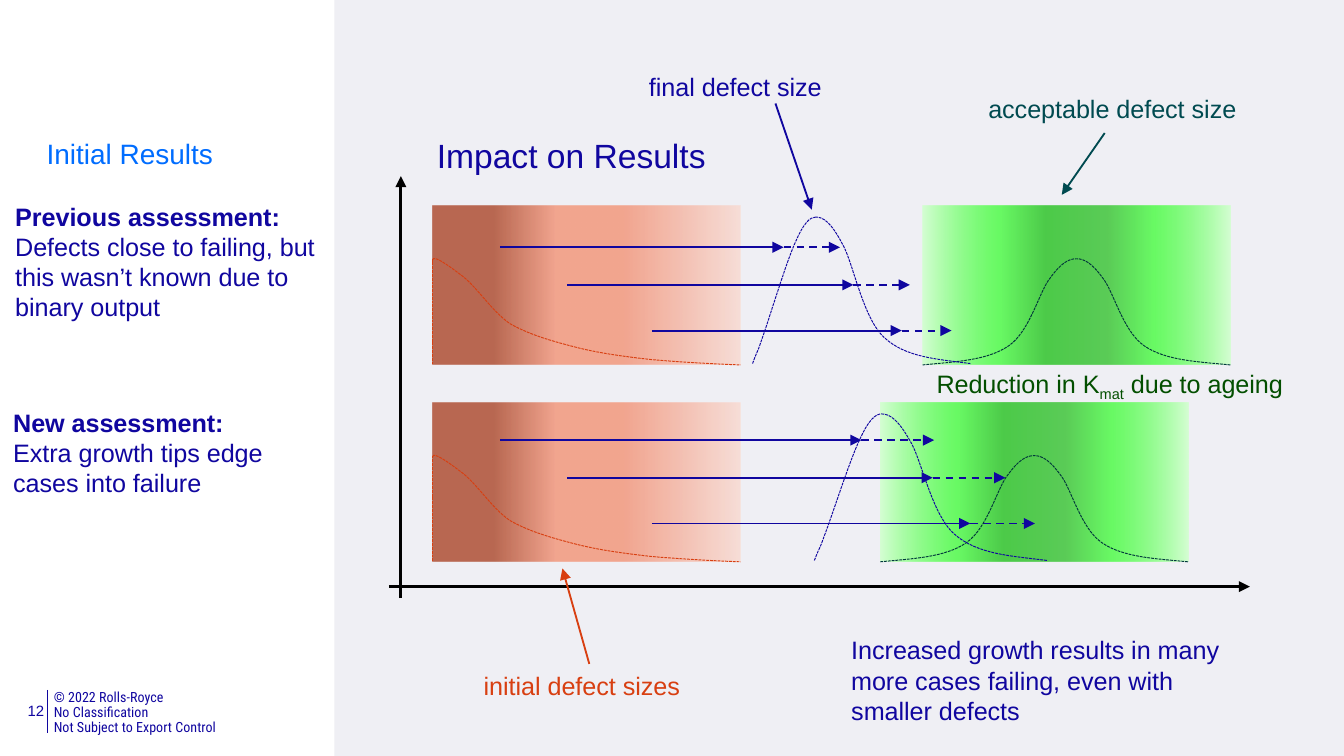
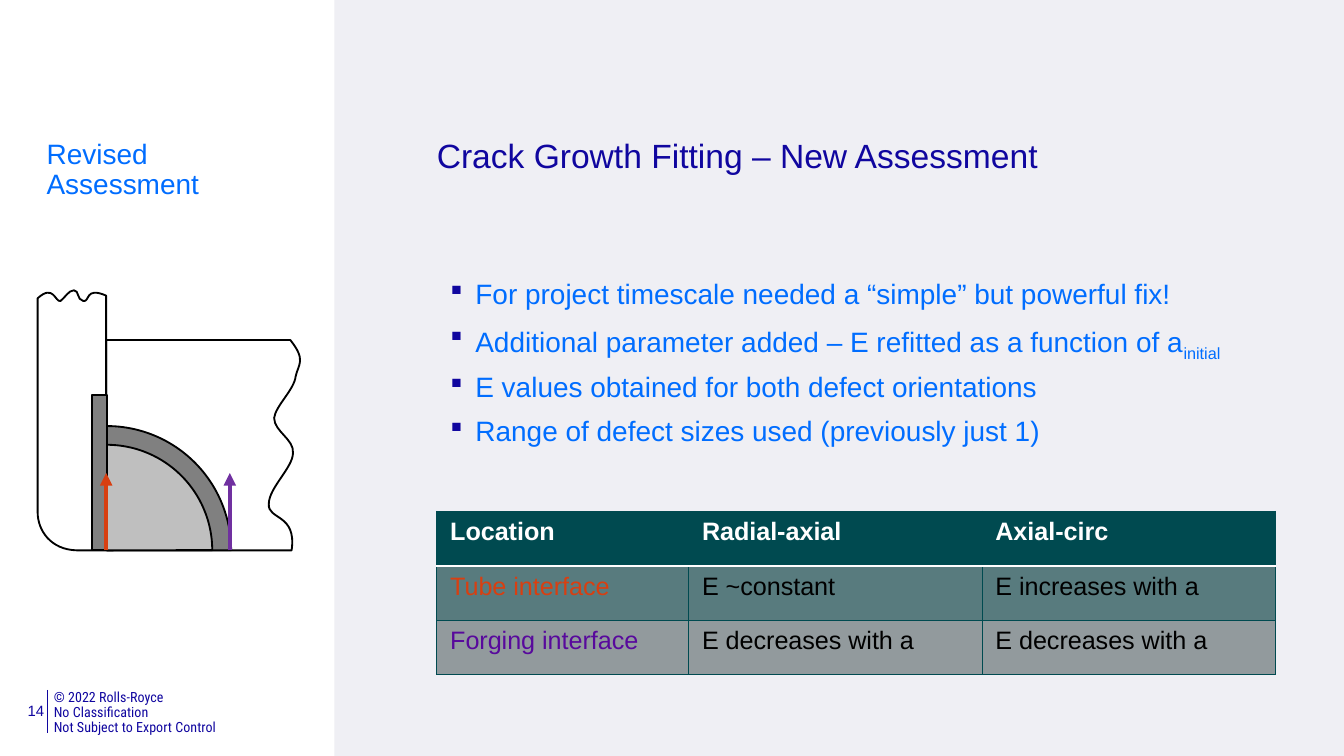
"""Build two slides on defect growth: the effect on results, and the fitting of crack growth."""
from dataclasses import dataclass
from typing import NamedTuple

from lxml import etree
from pptx import Presentation
from pptx.dml.color import RGBColor
from pptx.enum.dml import MSO_LINE
from pptx.enum.shapes import MSO_CONNECTOR, MSO_SHAPE
from pptx.enum.text import MSO_ANCHOR, MSO_AUTO_SIZE, PP_ALIGN
from pptx.oxml.ns import qn
from pptx.util import Emu, Inches, Pt

STRAIGHT = MSO_CONNECTOR.STRAIGHT
RECTANGLE, PIE = MSO_SHAPE.RECTANGLE, MSO_SHAPE.PIE
DASH, FINE_DASH = MSO_LINE.DASH, MSO_LINE.SQUARE_DOT
LEFT, RIGHT, TOP = PP_ALIGN.LEFT, PP_ALIGN.RIGHT, MSO_ANCHOR.TOP
NO_FIT, GROW = MSO_AUTO_SIZE.NONE, MSO_AUTO_SIZE.SHAPE_TO_FIT_TEXT
COLUMNS, ROWS = 100, 56.25


@dataclass(frozen=True)
class Theme:
    """Colours, fonts and type sizes."""
    navy: str = "10069F"
    blue: str = "006DFF"
    teal: str = "004A50"
    dark_teal: str = "00373B"
    orange: str = "D83F11"
    green: str = "034F00"
    purple: str = "7030A0"
    violet: str = "58099C"
    black: str = "000000"
    white: str = "FFFFFF"
    panel: str = "EFEFF4"
    steel: str = "808080"
    silver: str = "BFBFBF"
    row_fills: tuple = ("004A50", "587B7E", "929A9D")
    font: str = "Arial"
    footer_font: str = "Roboto Condensed"
    bullet_font: str = "Wingdings"
    title: float = 18
    body: float = 15
    label: float = 13.5
    page: float = 8
    footer: float = 7.5


THEME = Theme()


class Box(NamedTuple):
    """A frame in grid cells."""
    left: float
    top: float
    width: float
    height: float


class Style(NamedTuple):
    """Run formatting."""
    size: float
    color: str
    bold: bool = False
    font: str = THEME.font


class Pen(NamedTuple):
    """Line formatting."""
    color: str
    width: float = 1
    dash: MSO_LINE | None = None


class Label(NamedTuple):
    """A caption; text between bars is subscript."""
    text: str
    box: Box
    color: str
    wrap: bool = False
    heading: str = ""


class Arrow(NamedTuple):
    """A straight arrow between two grid points."""
    start: tuple
    end: tuple
    pen: Pen


class Assessment(NamedTuple):
    """One row of the chart: bands, curves and growth arrows."""
    top: float
    acceptable_left: float
    final_curve: tuple
    arrows_top: float
    arrow_ends: tuple


class Outline(NamedTuple):
    """A start point and segments of one point (line) or three (curve)."""
    start: tuple
    segments: tuple


BAND_WIDTH, BAND_HEIGHT = 22.9, 11.8
CURVE_DROP, CURVE_HEIGHT, FINAL_DROP, FINAL_HEIGHT = 3.95, 7.9, 0.85, 10.9
INITIAL_LEFT = 32.2
ARROW_STARTS = ((37.2, 0), (42.2, 2.8), (48.5, 6.2))
ASSESSMENTS = (
    Assessment(15.3, 68.65, (56, 60.7, 72.2), 18.4, ((58.3, 62.5), (63.5, 67.7), (67.1, 70.8))),
    Assessment(29.95, 65.5, (60.6, 65.6, 77.9), 32.75, ((64.1, 69.5), (69.4, 74.8), (72.2, 77))),
)
ACCEPTABLE_STOPS = ((0, "D6FFD4", 100), (25, "30FF27", 70), (40, "07BB00", 70),
                    (60, "1BBD14", 70), (75, "30FF27", 70), (100, "D6FFD4", 100))
INITIAL_STOPS = ((0, "FBD7CC", 70), (19, "F7AE98", 70), (38, "F38665", 70),
                 (60, "F38665", 70), (80, "A22F0D", 70))
BELL = Outline((0, 1), (((.21, .97), (.42, .96), (.56, .82)), ((.7, .68), (.76, .3), (.83, .18)),
                        ((.9, .04), (.95, 0), (1, 0))))
STEEP = Outline((0, 1), (((.11, .87), (.04, .97), (.15, .83)), ((.26, .7), (.53, .31), (.68, .17)),
                         ((.81, .04), (.91, 0), (1, 0))))
DECAY = Outline((0, .01), (((0, -.04), (.05, .06), (.09, .15)), ((.14, .25), (.19, .49), (.25, .61)),
                           ((.31, .71), (.38, .77), (.46, .83)), ((.54, .89), (.62, .92), (.71, .95)),
                           ((.79, .97), (.9, .99), (1, 1))))
FORGING = Outline((7.9, 25.3), (
    ((21.6, 25.3),), ((22.8, 26.8), (22.2, 27.1), (22, 28)), ((21.9, 29), (20.5, 30.2), (20.4, 31.1)),
    ((20.4, 32.1), (21.9, 32.7), (21.8, 33.7)), ((21.8, 34.8), (20, 36.3), (20, 37.5)),
    ((19.9, 38.7), (22.1, 38.2), (21.7, 40.95)), ((7.9, 40.95),), ((7.9, 25.3),)))
TUBE = Outline((2.8, 22.2), (
    ((2.8, 38.1),), ((2.8, 39.5), (3.8, 40.9), (5.7, 40.95)), ((7.9, 40.95),), ((7.9, 22),),
    ((6.3, 21.3), (6.7, 22.5), (6.2, 22.4)), ((5.7, 22.3), (5.9, 21.6), (5.5, 21.6)),
    ((5.1, 21.6), (4.8, 22.2), (4.5, 22.4)), ((4.1, 22.5), (4, 21.1), (2.8, 22.2))))
UNIT = Box(0, 0, 1, 1)
LABELS = (
    Label("acceptable defect size", Box(72.55, 6.45, 21.3, 3.3), THEME.teal),
    Label("Defects close to failing, but this wasn’t known due to binary output",
          Box(.15, 14.47, 27.6, 10.1), THEME.navy, True, "Previous assessment:"),
    Label("Extra growth tips edge cases into failure",
          Box(0, 29.8, 25, 7.8), THEME.navy, True, "New assessment:"),
    Label("Reduction in K|mat| due to ageing", Box(68.7, 26.9, 29.4, 3.3), THEME.green),
    Label("initial defect sizes", Box(35, 49.4, 17.3, 3.3), THEME.orange),
    Label("Increased growth results in many more cases failing, even with smaller defects",
          Box(62.35, 46.74, 30.2, 7.8), THEME.navy, True),
    Label("final defect size", Box(47.3, 4.8, 15.5, 3.3), THEME.navy),
)
AXES_AND_POINTERS = (
    Arrow((29.83, 44.5), (29.83, 13.1), Pen(THEME.black, 1.5)),
    Arrow((28.93, 43.65), (93, 43.65), Pen(THEME.black, 1.5)),
    Arrow((82.2, 9.9), (79, 14.5), Pen(THEME.teal)),
    Arrow((43.85, 49.4), (41.85, 42.3), Pen(THEME.orange)),
    Arrow((57.7, 7.7), (60.4, 15.6), Pen(THEME.navy)),
)
FITTING_POINTS = ("For project timescale needed a “simple” but powerful fix!",
                  "Additional parameter added – E refitted as a function of a|initial",
                  "E values obtained for both defect orientations",
                  "Range of defect sizes used (previously just 1)")
TABLE_ROWS = (("Location", "Radial-axial", "Axial-circ"),
              ("Tube interface", "E ~constant", "E increases with a"),
              ("Forging interface", "E decreases with a", "E decreases with a"))


def cells(count: float) -> Emu:
    """Convert grid cells to a length."""
    return Inches(10 * count / COLUMNS)


def frame(box: Box) -> tuple:
    """Convert a box to lengths."""
    return tuple(cells(value) for value in box)


def write(text_frame, lines, style: Style, spacing=None, before=0, align=LEFT, bullet=False):
    """Write paragraphs, with every second piece between bars as subscript."""
    for index, line in enumerate(lines):
        paragraph = text_frame.paragraphs[0] if index == 0 else text_frame.add_paragraph()
        first, *others = line.split("|")
        paragraph.text = first
        for position, piece in enumerate(others):
            run = paragraph.add_run()
            run.text = piece
            if position % 2 == 0:
                run.font._element.set("baseline", "-25000")
        paragraph.alignment, paragraph.line_spacing = align, spacing
        paragraph.space_before = Pt(before if index else 0)
        properties = paragraph._p.get_or_add_pPr()
        indent = cells(1.87) if bullet else 0
        properties.set("marL", str(indent))
        properties.set("indent", str(-indent))
        if bullet:
            color = etree.SubElement(properties, qn("a:buClr"))
            etree.SubElement(color, qn("a:srgbClr"), val=THEME.navy)
            etree.SubElement(properties, qn("a:buFont"), typeface=THEME.bullet_font,
                             pitchFamily="2", charset="2")
            etree.SubElement(properties, qn("a:buChar"), char="§")
        else:
            etree.SubElement(properties, qn("a:buNone"))
        for run in paragraph.runs:
            run.font.name, run.font.size, run.font.bold = style.font, Pt(style.size), style.bold
            run.font.color.rgb = RGBColor.from_string(style.color)


def set_margins(text_frame, horizontal: float, vertical: float):
    """Set the text insets in grid cells."""
    text_frame.margin_left = text_frame.margin_right = cells(horizontal)
    text_frame.margin_top = text_frame.margin_bottom = cells(vertical)


def fill_placeholder(shape, box: Box, lines, style: Style, margins=(1, .5), bullet=False):
    """Move a placeholder and write its text."""
    shape.left, shape.top, shape.width, shape.height = frame(box)
    text_frame = shape.text_frame
    text_frame.auto_size, text_frame.vertical_anchor = NO_FIT, TOP
    text_frame.word_wrap = True
    set_margins(text_frame, *margins)
    write(text_frame, lines, style, spacing=.9, before=7.5, bullet=bullet)


def add_text(slide, box: Box, lines, style: Style, wrap=True, **layout):
    """Add a text box."""
    shape = slide.shapes.add_textbox(*frame(box))
    shape.text_frame.word_wrap, shape.text_frame.auto_size = wrap, GROW
    write(shape.text_frame, lines, style, **layout)
    return shape


def draw_line(line, pen: Pen):
    """Format a line."""
    line.color.rgb = RGBColor.from_string(pen.color)
    line.width = Pt(pen.width)
    if pen.dash:
        line.dash_style = pen.dash


def add_line(slide, arrow: Arrow, head: bool = True):
    """Add a straight connector, with an arrowhead by default."""
    connector = slide.shapes.add_connector(
        STRAIGHT, *(cells(value) for value in (*arrow.start, *arrow.end)))
    draw_line(connector.line, arrow.pen)
    properties = connector.element.spPr
    if head:
        etree.SubElement(properties.find(qn("a:ln")), qn("a:tailEnd"), type="triangle")
    etree.SubElement(properties, qn("a:effectLst"))
    return connector


def finish(shape, color: str | None, pen: Pen | None):
    """Set the fill and line of a shape and drop its shadow."""
    shape.shadow.inherit = False
    if color:
        shape.fill.solid()
        shape.fill.fore_color.rgb = RGBColor.from_string(color)
    else:
        shape.fill.background()
    if pen:
        draw_line(shape.line, pen)
    else:
        shape.line.fill.background()
    return shape


def add_shape(slide, kind, box: Box, color: str | None, pen: Pen | None = None):
    """Add a preset shape."""
    return finish(slide.shapes.add_shape(kind, *frame(box)), color, pen)


def add_gradient(slide, box: Box, stops, rotation: float = 0):
    """Add a rectangle with a gradient from left to right."""
    shape = add_shape(slide, RECTANGLE, box, None)
    shape.rotation = rotation
    shape.fill.gradient()
    shape.fill.gradient_angle = 0
    stop_list = shape.element.spPr.find(qn("a:gradFill")).find(qn("a:gsLst"))
    stop_list.clear()
    for position, color, opacity in stops:
        stop = etree.SubElement(stop_list, qn("a:gs"), pos=str(position * 1000))
        value = etree.SubElement(stop, qn("a:srgbClr"), val=color)
        if opacity < 100:
            etree.SubElement(value, qn("a:alpha"), val=str(opacity * 1000))


def add_outline(slide, outline: Outline, box: Box, pen: Pen, color: str | None = None):
    """Add a freeform with true curves, scaled to a box; a negative width mirrors it."""
    def place(point):
        return cells(box.left + box.width * point[0]), cells(box.top + box.height * point[1])

    builder = slide.shapes.build_freeform(*place(outline.start), scale=1.0)
    builder.add_line_segments([place(segment[-1]) for segment in outline.segments],
                              close=color is not None)
    shape = builder.convert_to_shape()
    for step, segment in zip(list(shape.element.iter(qn("a:lnTo"))), outline.segments):
        if len(segment) == 3:
            curve = etree.Element(qn("a:cubicBezTo"))
            for x, y in map(place, segment):
                etree.SubElement(curve, qn("a:pt"), x=str(x - shape.left), y=str(y - shape.top))
            step.getparent().replace(step, curve)
    finish(shape, color, pen)


def add_master_parts(presentation, slide):
    """Put the panel, footer and footer rule on the slide master."""
    footer = add_text(slide, Box(4, 51.34, 22.2, 3.4),
                      ("© 2022 Rolls-Royce", "No Classification", "Not Subject to Export Control"),
                      Style(THEME.footer, THEME.navy, font=THEME.footer_font), spacing=.9)
    set_margins(footer.text_frame, 0, 0)
    rule = add_line(slide, Arrow((3.5, 51.34), (3.5, 54.54), Pen(THEME.navy, .5)), head=False)
    panel = add_shape(slide, RECTANGLE, Box(24.87, 0, COLUMNS - 24.87, ROWS), THEME.panel)
    for number, shape in enumerate((rule, footer, panel), start=101):
        shape.element.xpath("./*/p:cNvPr")[0].set("id", str(number))
        presentation.slide_master.shapes.element.append(shape.element)


def add_slide(presentation, layout: int, number: int, title: str, section: str):
    """Add a slide with its title, section name and page number."""
    slide = presentation.slides.add_slide(presentation.slide_layouts[layout])
    fill_placeholder(slide.shapes.title, Box(32.5, 10.4, 63.8, 7.6), (title,),
                     Style(THEME.title, THEME.navy), (0, 0))
    fill_placeholder(slide.placeholders[1], Box(2.47, 9.94, 19.5, 10.5), (section,),
                     Style(THEME.body, THEME.blue))
    add_text(slide, Box(.47, 51.7, 3.8, 2.4), (str(number),), Style(THEME.page, THEME.navy), align=RIGHT)
    return slide


def add_assessment(slide, row: Assessment):
    """Draw one row of bands, growth arrows and curves."""
    add_gradient(slide, Box(row.acceptable_left, row.top, BAND_WIDTH, BAND_HEIGHT), ACCEPTABLE_STOPS)
    add_gradient(slide, Box(INITIAL_LEFT, row.top, BAND_WIDTH, BAND_HEIGHT), INITIAL_STOPS, 180)
    for (start, drop), (middle, end) in zip(ARROW_STARTS, row.arrow_ends):
        height = row.arrows_top + drop
        add_line(slide, Arrow((start, height), (middle, height), Pen(THEME.navy)))
        add_line(slide, Arrow((middle, height), (end, height), Pen(THEME.navy, 1, DASH)))
    half, top = BAND_WIDTH / 2, row.top + CURVE_DROP
    acceptable, initial, final = (Pen(color, .5, FINE_DASH)
                                  for color in (THEME.dark_teal, THEME.orange, THEME.navy))
    for foot, width in ((row.acceptable_left, half), (row.acceptable_left + BAND_WIDTH, -half)):
        add_outline(slide, BELL, Box(foot, top, width, CURVE_HEIGHT), acceptable)
    add_outline(slide, DECAY, Box(INITIAL_LEFT, top, BAND_WIDTH, CURVE_HEIGHT), initial)
    add_line(slide, Arrow((INITIAL_LEFT, top), (INITIAL_LEFT, top + CURVE_HEIGHT), initial), head=False)
    left, peak, right = row.final_curve
    for outline, foot in ((STEEP, left), (BELL, right)):
        add_outline(slide, outline, Box(foot, row.top + FINAL_DROP, peak - foot, FINAL_HEIGHT), final)


def add_joint(slide):
    """Draw the tube, the forging, the weld and the two crack arrows."""
    pen = Pen(THEME.black)
    for outline in (FORGING, TUBE):
        add_outline(slide, outline, UNIT, pen, THEME.white)
    for radius, color in ((9.25, THEME.steel), (7.85, THEME.silver)):
        weld = add_shape(slide, PIE, Box(7.95 - radius, 40.95 - radius, 2 * radius, 2 * radius), color, pen)
        weld.adjustments[0], weld.adjustments[1] = 161.86, 215.95
    add_shape(slide, RECTANGLE, Box(6.84, 29.38, 1.1, 11.57), THEME.steel, pen)
    for left, color in ((7.9, THEME.orange), (17.1, THEME.purple)):
        add_line(slide, Arrow((left, 40.95), (left, 35.2), Pen(color, 2.25)))


def add_border(cell, side: str, pen: Pen):
    """Add a border to one side of a table cell."""
    line = etree.SubElement(cell._tc.get_or_add_tcPr(), qn(f"a:ln{side}"), w=str(Pt(pen.width)))
    fill = etree.SubElement(line, qn("a:solidFill"))
    etree.SubElement(fill, qn("a:srgbClr"), val=pen.color)


def add_fitting_table(slide):
    """Add the table of locations and orientations."""
    table = slide.shapes.add_table(3, 3, *frame(Box(32.5, 38.05, 62.4, 12.15))).table
    for column, width in zip(table.columns, (18.74, 21.83, 21.83)):
        column.width = cells(width)
    edge, divider = Pen(THEME.teal, .5), Pen(THEME.white)
    name_colors = (THEME.white, THEME.orange, THEME.violet)
    for row, texts in enumerate(TABLE_ROWS):
        for column, text in enumerate(texts):
            cell = table.cell(row, column)
            borders = {"L": edge, "R": edge, "T": divider if row == 1 else edge,
                       "B": divider if row == 0 else edge}
            for side, pen in borders.items():
                add_border(cell, side, pen)
            cell.fill.solid()
            cell.fill.fore_color.rgb = RGBColor.from_string(THEME.row_fills[row])
            color = name_colors[row] if row == 0 or column == 0 else THEME.black
            write(cell.text_frame, (text,), Style(THEME.label, color, row == 0))


def main():
    """Build and save the presentation."""
    presentation = Presentation()
    presentation.slide_width, presentation.slide_height = cells(COLUMNS), cells(ROWS)
    results = add_slide(presentation, 1, 12, "Impact on Results", "Initial Results")
    add_master_parts(presentation, results)
    for row in ASSESSMENTS:
        add_assessment(results, row)
    for arrow in AXES_AND_POINTERS:
        add_line(results, arrow)
    for label in LABELS:
        lines = (label.heading, label.text) if label.heading else (label.text,)
        shape = add_text(results, label.box, lines, Style(THEME.label, label.color), label.wrap)
        if label.heading:
            shape.text_frame.paragraphs[0].runs[0].font.bold = True
    fitting = add_slide(presentation, 3, 14, "Crack Growth Fitting – New Assessment", "Revised Assessment")
    fill_placeholder(fitting.placeholders[2], Box(32.5, 20.36, 63.8, 28.6), FITTING_POINTS,
                     Style(THEME.body, THEME.blue), bullet=True)
    add_joint(fitting)
    add_fitting_table(fitting)
    presentation.save("out.pptx")


if __name__ == "__main__":
    main()
